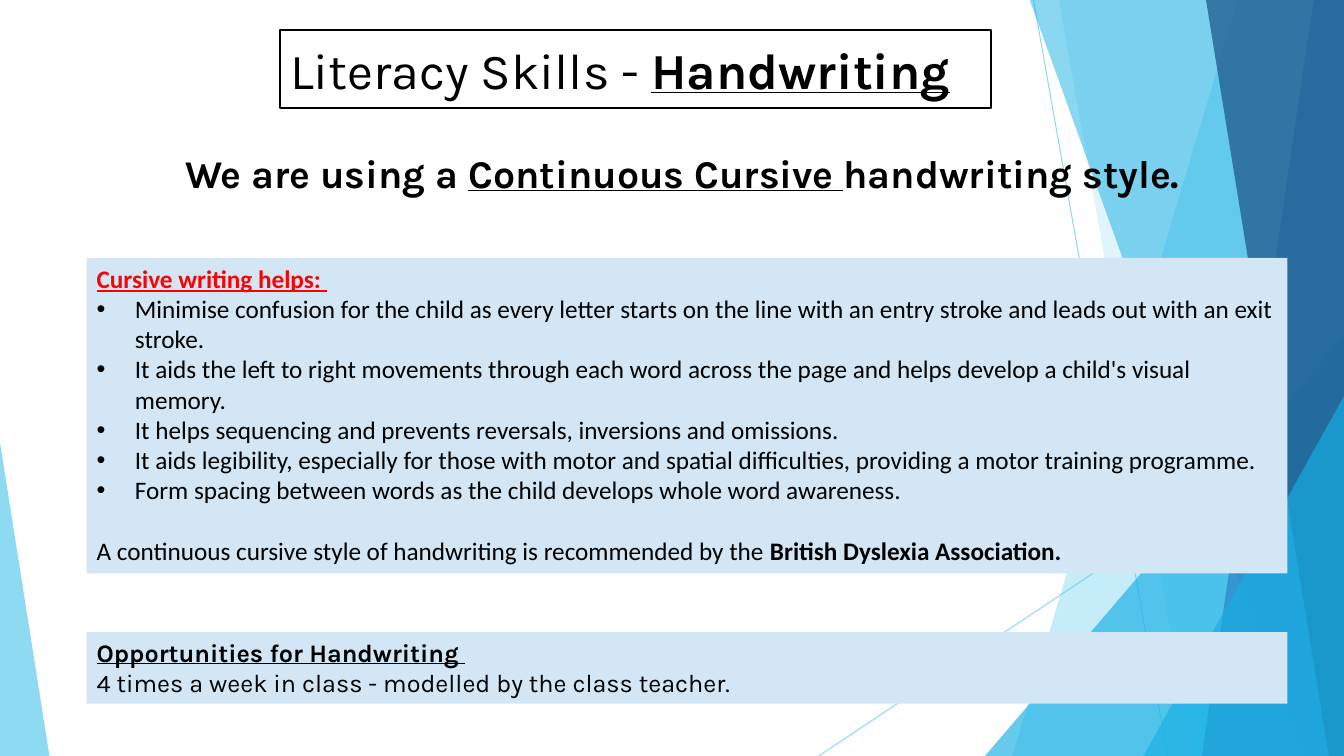
from lxml import etree
from pptx import Presentation
from pptx.dml.color import RGBColor
from pptx.enum.shapes import MSO_CONNECTOR as Connector, MSO_SHAPE as Shape
from pptx.enum.text import MSO_ANCHOR as Anchor, PP_ALIGN as Align
from pptx.oxml.ns import qn
from pptx.util import Inches, Pt

WIDTH, HEIGHT = 13.33, 7.5
COLOURS = {
    "sky": "5FCBEF", "cyan": "17B0E4", "blue": "2E83C3", "navy": "226292",
    "panel": "D3E6F5", "white": "FFFFFF", "black": "000000", "red": "FF0000",
}


class SlideBuilder:
    def __init__(self, page):
        self.page = page

    def colour(self, name):
        return RGBColor.from_string(COLOURS[name])

    def paint(self, fill, colour, opacity=100):
        fill.solid()
        fill.fore_color.rgb = self.colour(colour)
        if opacity < 100:
            for tint in fill._xPr.iter(qn("a:srgbClr")):
                etree.SubElement(tint, qn("a:alpha"), val=str(opacity * 1000))

    def finish(self, shape, colour, opacity=100):
        shape.shadow.inherit = False
        shape.line.fill.background()
        self.paint(shape.fill, colour, opacity)

    def ray(self, start, end):
        ray = self.page.shapes.add_connector(
            Connector.STRAIGHT, *map(Inches, start + end))
        ray.line.width = Pt(0.75)
        self.paint(ray.line.fill, "sky", 70)
        etree.SubElement(ray._element.spPr, qn("a:effectLst"))

    def wing(self, top_x, bottom_x, colour, opacity):
        """A band from a slanted left edge to the right side of the slide."""
        top = -0.01
        corners = [(WIDTH, top), (WIDTH, HEIGHT), (bottom_x, HEIGHT)]
        outline = self.page.shapes.build_freeform(Inches(top_x), Inches(top))
        outline.add_line_segments(
            [(Inches(x), Inches(y)) for x, y in corners], close=True)
        self.finish(outline.convert_to_shape(), colour, opacity)

    def triangle(self, left, width, height, peak, colour, opacity):
        """A triangle standing on the bottom edge."""
        shape = self.page.shapes.add_shape(
            Shape.ISOSCELES_TRIANGLE, Inches(left), Inches(HEIGHT - height),
            Inches(width), Inches(height))
        shape.adjustments[0] = peak
        self.finish(shape, colour, opacity)

    def panel(self, area, fill, anchor=Anchor.TOP, border=None):
        box = self.page.shapes.add_shape(Shape.RECTANGLE, *map(Inches, area))
        self.finish(box, fill)
        if border:
            box.line.color.rgb = self.colour(border)
            box.line.width = Pt(1.5)
        return self.prepare(box, anchor)

    def text_box(self, area):
        return self.prepare(
            self.page.shapes.add_textbox(*map(Inches, area)), Anchor.TOP)

    def prepare(self, box, anchor):
        box.text_frame.word_wrap = True
        box.text_frame.vertical_anchor = anchor
        return box

    def add_text(self, box, paragraphs, font, size):
        """Each paragraph is (layout, spans); each span is (text, format)."""
        frame = box.text_frame
        for index, (layout, spans) in enumerate(paragraphs):
            para = frame.add_paragraph() if index else frame.paragraphs[0]
            para.alignment = Align.LEFT
            para.space_before = Pt(layout.get("before", 0))
            if layout.get("bullet"):
                self.bullet(para)
            for text, changes in spans:
                span = para.add_run()
                span.text = text
                look = {"name": font, "size": Pt(size), "bold": False,
                        "underline": False, **changes}
                span.font.color.rgb = self.colour(look.pop("colour", "black"))
                for key, value in look.items():
                    setattr(span.font, key, value)

    def bullet(self, para):
        indent = Inches(0.38)
        properties = para._p.get_or_add_pPr()
        properties.set("marL", str(indent))
        properties.set("indent", str(-indent))
        etree.SubElement(properties, qn("a:buFont"), typeface="Arial")
        etree.SubElement(properties, qn("a:buChar"), char="•")


def main():
    deck = Presentation()
    deck.slide_width, deck.slide_height = Inches(WIDTH), Inches(HEIGHT)
    builder = SlideBuilder(deck.slides.add_slide(deck.slide_layouts[6]))
    bold = {"bold": True}
    heading = {"bold": True, "underline": True}

    # Faceted background
    builder.ray((10.25, 0), (11.58, HEIGHT))
    builder.ray((WIDTH, 4.03), (8.12, HEIGHT))
    builder.wing(12.28, 10.04, "sky", 36)
    builder.wing(10.5, 11.83, "sky", 20)
    builder.triangle(9.77, 3.56, 4.17, 1, "cyan", 66)
    builder.wing(10.21, 12.91, "cyan", 50)
    builder.wing(13.03, 11.92, "blue", 70)
    builder.wing(11.96, 13.18, "navy", 80)
    builder.triangle(11.34, 1.99, 3.57, 1, "cyan", 66)
    builder.triangle(0, 0.49, 3.11, 0, "sky", 70)

    # Title
    title = builder.panel((2.78, 0.3, 7.05, 0.77), "white", Anchor.MIDDLE, "black")
    builder.add_text(title, [
        ({}, [("Literacy Skills - ", {}), ("Handwriting", heading)]),
    ], "Karla", 36)

    # Statement
    statement = builder.text_box((1.74, 1.43, 10.39, 0.57))
    builder.add_text(statement, [
        ({}, [("We are using a ", bold), ("Continuous Cursive ", heading),
              ("handwriting style.", bold)]),
    ], "Karla", 28)

    # Opportunities
    opportunities = builder.panel((0.86, 6.27, 11.91, 0.71), "panel")
    builder.add_text(opportunities, [
        ({}, [("Opportunities for Handwriting ", heading)]),
        ({}, [("4 times a week in class - modelled by the class teacher.", {})]),
    ], "Karla", 18)

    # Benefits of cursive writing
    points = [
        "Minimise confusion for the child as every letter starts on the line "
        "with an entry stroke and leads out with an exit stroke.",
        "It aids the left to right movements through each word across the page "
        "and helps develop a child's visual memory.",
        "It helps sequencing and prevents reversals, inversions and omissions.",
        "It aids legibility, especially for those with motor and spatial "
        "difficulties, providing a motor training programme.",
        "Form spacing between words as the child develops whole word awareness.",
    ]
    benefits = builder.panel((0.86, 2.56, 11.91, 3.13), "panel")
    builder.add_text(benefits, [
        ({}, [("Cursive writing helps: ", {**heading, "colour": "red"})]),
        *[({"bullet": True}, [(point, {})]) for point in points],
        ({"before": 22}, [
            ("A continuous cursive style of handwriting is recommended by the ", {}),
            ("British Dyslexia Association.", bold)]),
    ], "Calibri", 18)

    deck.save("out.pptx")


if __name__ == "__main__":
    main()
